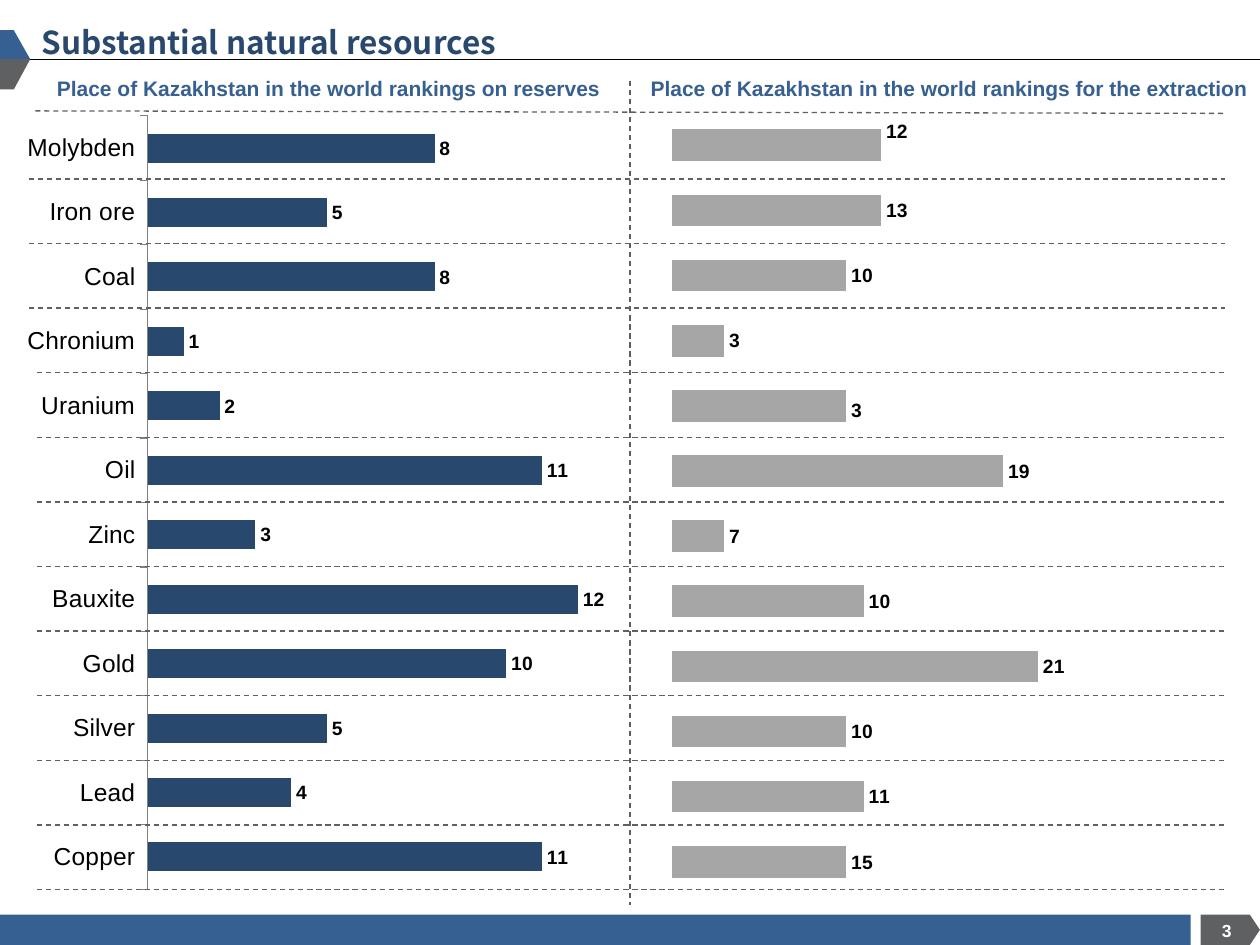
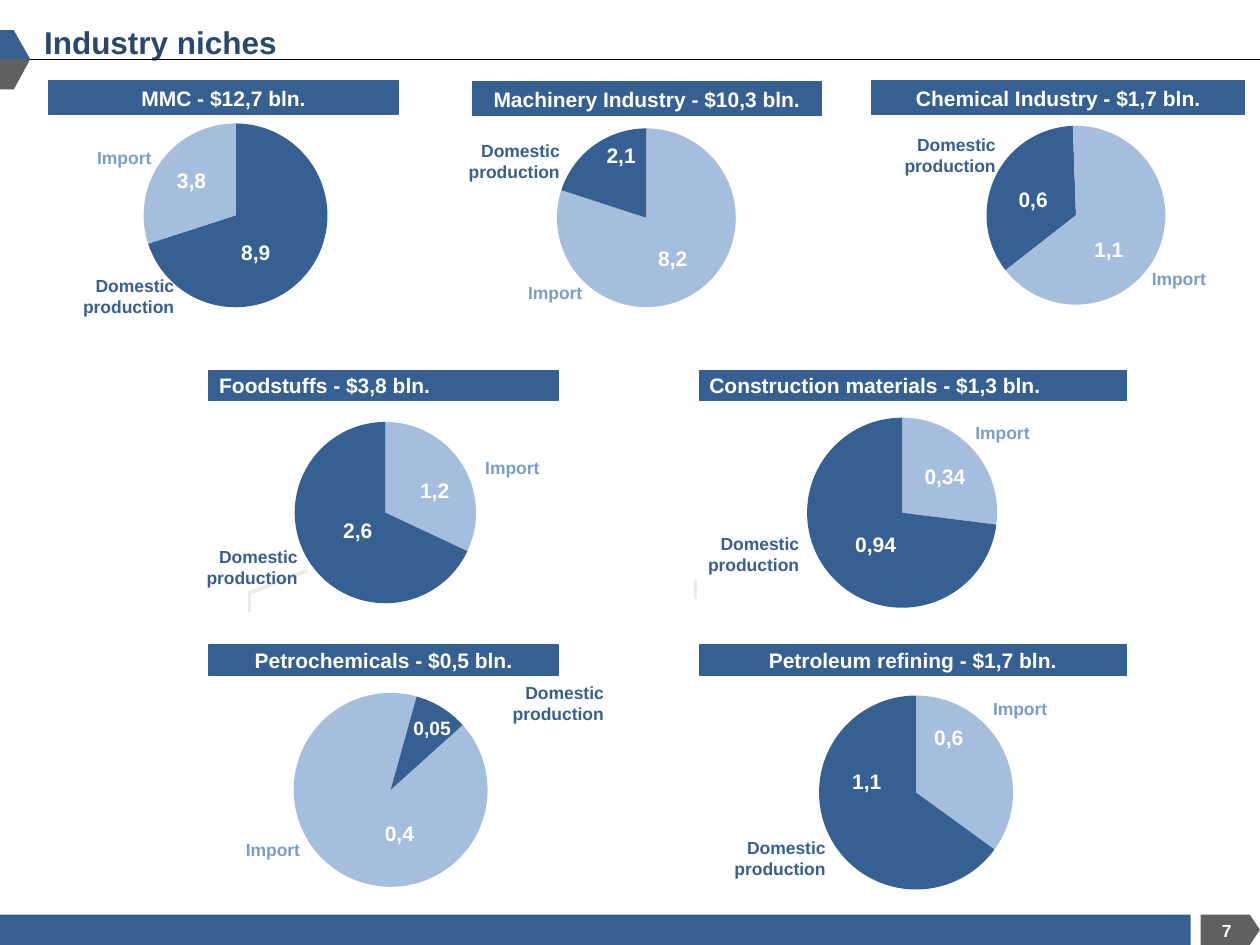
from lxml import etree
from pptx import Presentation
from pptx.chart.data import CategoryChartData
from pptx.dml.color import RGBColor
from pptx.enum.chart import XL_CHART_TYPE, XL_LABEL_POSITION, XL_TICK_LABEL_POSITION, XL_TICK_MARK
from pptx.enum.dml import MSO_LINE
from pptx.enum.shapes import MSO_CONNECTOR, MSO_SHAPE
from pptx.enum.text import MSO_ANCHOR, MSO_AUTO_SIZE, PP_ALIGN
from pptx.oxml.ns import qn
from pptx.util import Inches, Pt

BAR, PIE = XL_CHART_TYPE.BAR_CLUSTERED, XL_CHART_TYPE.PIE
OUTSIDE_END = XL_LABEL_POSITION.OUTSIDE_END
LOW, TICK_OUT, TICK_NONE = XL_TICK_LABEL_POSITION.LOW, XL_TICK_MARK.OUTSIDE, XL_TICK_MARK.NONE
DASH, STRAIGHT, RECTANGLE = MSO_LINE.DASH, MSO_CONNECTOR.STRAIGHT, MSO_SHAPE.RECTANGLE
TOP, MIDDLE = MSO_ANCHOR.TOP, MSO_ANCHOR.MIDDLE
LEFT, CENTER, RIGHT = PP_ALIGN.LEFT, PP_ALIGN.CENTER, PP_ALIGN.RIGHT

FONT = "Arial"
BLUE, NAVY, GRAY, WHITE, BLACK = "376092", "29486E", "5F6062", "FFFFFF", "000000"
PALE_BLUE, IMPORT_BLUE, BAR_GRAY, FAINT = "A5BEDD", "789ECC", "A6A6A6", "EBEBEB"


def paint(target, colour):
    """Colour a font, or give a fill a solid colour."""
    if hasattr(target, "solid"):
        target.solid()
        target.fore_color.rgb = RGBColor.from_string(colour)
    else:
        target.color.rgb = RGBColor.from_string(colour)


def write(box, text, size=12, colour=WHITE, font=FONT, align=CENTER, anchor=MIDDLE,
          wrap=True, margins=(0.1, 0.05), spacing=None):
    frame = box.text_frame
    frame.auto_size = MSO_AUTO_SIZE.NONE
    frame.word_wrap = wrap
    frame.vertical_anchor = anchor
    frame.margin_left = frame.margin_right = Inches(margins[0])
    frame.margin_top = frame.margin_bottom = Inches(margins[1])
    para = frame.paragraphs[0]
    para.alignment = align
    if spacing:
        para.line_spacing = spacing
    span = para.add_run()
    span.text = text
    span.font.name, span.font.size, span.font.bold = font, Pt(size), True
    paint(span.font, colour)


deck = Presentation()
deck.slide_width, deck.slide_height = Inches(10), Inches(7.5)

lines = []        # page, start and end, colour, width, dashed
plot_areas = []   # chart, plot rectangle as fractions of the chart

# Shared frame: bands, title, page number
flags = [
    (GRAY, [(9.92, 7.26), (9.53, 7.26), (9.53, 7.5), (9.92, 7.5), (10, 7.38)]),
    (BLUE, [(0.11, 0.24), (0, 0.24), (0, 0.47), (0.24, 0.47)]),
    (GRAY, [(0.24, 0.47), (0, 0.47), (0, 0.71), (0.11, 0.71)]),
]
pages = []
for title, number, title_at, title_font, spacing in [
    ("Substantial natural resources", "3", (0.23, 0.19, 4.75, 0.34), "Noto Sans CJK SC", 0.8),
    ("Industry niches", "7", (0.25, 0.13, 2.07, 0.4), FONT, None),
]:
    page = deck.slides.add_slide(deck.slide_layouts[5])
    pages.append(page)
    bands = [(page.shapes.add_shape(RECTANGLE, 0, Inches(7.26), Inches(9.45), Inches(0.24)), BLUE)]
    for colour, points in flags:
        corners = [(Inches(x), Inches(y)) for x, y in points]
        builder = page.shapes.build_freeform(*corners[0])
        builder.add_line_segments(corners[1:], close=True)
        bands.append((builder.convert_to_shape(), colour))
    for band, colour in bands:
        band.shadow.inherit = False
        paint(band.fill, colour)
        band.line.fill.background()
    lines.append((page, (0.24, 0.47, 10, 0.47), BLACK, 0.5, False))

    heading = page.shapes.title
    heading.left, heading.top, heading.width, heading.height = map(Inches, title_at)
    write(heading, title, size=18, colour=NAVY, font=title_font, align=LEFT, anchor=TOP,
          wrap=False, spacing=spacing)
    box = page.shapes.add_textbox(*map(Inches, (9.65, 7.3, 0.17, 0.17)))
    write(box, number, size=10, wrap=False, margins=(0, 0))

resources_page, niches_page = pages

# Resource rankings: two bar charts
resources = ["Copper", "Lead", "Silver", "Gold", "Bauxite", "Zinc", "Oil", "Uranium",
             "Chronium", "Coal", "Iron ore", "Molybden"]
places = [str(place) for place in range(1, 13)]
extraction_labels = [15, 11, 10, 21, 10, 7, 19, 3, 3, 10, 13, 12]
label_shifts = {7: 0.005, 11: -0.015}
for at, categories, values, colour, gap, top_value, plot_area in [
    ((0, 0.69, 5.31, 6.96), resources, [11, 4, 5, 10, 12, 3, 11, 2, 1, 8, 5, 8],
     NAVY, 122, 14, (0.221, 0.033, 0.75, 0.882)),
    ((5.16, 0.56, 5.39, 7.29), places, [10, 11, 10, 21, 11, 3, 19, 10, 3, 10, 12, 12],
     BAR_GRAY, 106, 25, (0.032, 0.046, 0.642, 0.851)),
]:
    data = CategoryChartData()
    data.categories = categories
    data.add_series("Series 1", values)
    chart = resources_page.shapes.add_chart(BAR, *map(Inches, at), data).chart
    plot_areas.append((chart, plot_area))
    chart.has_legend = chart.has_title = False
    chart.font.name, chart.font.size = FONT, Pt(14)
    paint(chart.font, BLACK)

    value_axis, category_axis = chart.value_axis, chart.category_axis
    value_axis.minimum_scale, value_axis.maximum_scale = 0, top_value
    value_axis.has_major_gridlines = value_axis.visible = False
    category_axis.visible = categories is resources
    category_axis.major_tick_mark, category_axis.minor_tick_mark = TICK_OUT, TICK_NONE
    category_axis.tick_label_position = LOW
    paint(category_axis.format.line.fill, "808080")
    category_axis.format.line.width = Pt(0.75)

    plot = chart.plots[0]
    plot.gap_width, plot.vary_by_categories = gap, False
    series = plot.series[0]
    paint(series.format.fill, colour)
    labels = series.data_labels
    labels.show_value, labels.position = True, OUTSIDE_END
    labels.font.size, labels.font.bold = Pt(11), True
    paint(labels.font, BLACK)

# Extraction places shown in place of the bar values
for index, place in enumerate(extraction_labels):
    label = series.points[index].data_label
    span = label.text_frame.paragraphs[0].add_run()
    span.text = str(place)
    span.font.name, span.font.size, span.font.bold = FONT, Pt(11), True
    paint(span.font, BLACK)
    label.position = OUTSIDE_END
for label in chart.element.iter(qn("c:dLbl")):
    index_element = label.find(qn("c:idx"))
    shift = label_shifts.get(int(index_element.get("val")))
    if shift:
        for old_layout in label.findall(qn("c:layout")):
            label.remove(old_layout)
        layout = etree.Element(qn("c:layout"))
        manual = etree.SubElement(layout, qn("c:manualLayout"))
        etree.SubElement(manual, qn("c:x")).set("val", "0")
        etree.SubElement(manual, qn("c:y")).set("val", str(shift))
        index_element.addnext(layout)

# Column headings and dashed row grid
for text, at in [
    ("Place of Kazakhstan in the world rankings on reserves", (0.21, 0.55, 4.8, 0.3)),
    ("Place of Kazakhstan in the world rankings for the extraction", (5.02, 0.55, 5.03, 0.3)),
]:
    write(resources_page.shapes.add_textbox(*map(Inches, at)), text, colour=BLUE, anchor=TOP)
grid = [(0.28, 0.88, 9.72, 0.9), (5, 0.64, 5, 7.18)]
for row in range(12):
    y = 1.42 + row * 5.64 / 11
    grid.append((0.23 if row < 3 else 0.29, y, 9.72, y))
lines += [(resources_page, ends, GRAY, 0.75, True) for ends in grid]

# Faint leader lines beside the middle pies
for ends in [(2.44, 4.53, 1.97, 4.71), (1.98, 4.86, 1.98, 4.71), (5.52, 4.75, 5.52, 4.6)]:
    lines.append((niches_page, ends, FAINT, 2.25, False))

# Draw all lines, below the pies and their labels
for page, ends, colour, width, dashed in lines:
    connector = page.shapes.add_connector(STRAIGHT, *map(Inches, ends))
    paint(connector.line.fill, colour)
    connector.line.width = Pt(width)
    if dashed:
        connector.line.dash_style = DASH
    etree.SubElement(connector.element.spPr, qn("a:effectLst"))

# Industry niches: pies. Circle is centre and diameter, names are right edge
# and middle, amounts are text, centre and size; import first, then domestic.
niches = [
    ("MMC - $12,7 bln.", (0.39, 0.64, 2.77, 0.27), CENTER,
     (0.9, 0.83, 1.95, 1.75), (1.87, 1.71, 1.46), 0, [(70, BLUE), (30, PALE_BLUE)],
     [(1.3, 1.25), (1.48, 2.35)], [("3,8", 1.52, 1.43, 12), ("8,9", 2.03, 2, 12)]),
    ("Machinery Industry - $10,3 bln.", (3.75, 0.65, 2.77, 0.27), CENTER,
     (4.25, 0.88, 1.76, 1.7), (5.13, 1.73, 1.42), 0, [(80, PALE_BLUE), (20, BLUE)],
     [(4.72, 2.32), (4.54, 1.28)], [("8,2", 5.34, 2.05, 12), ("2,1", 4.93, 1.23, 12)]),
    ("Chemical Industry - $1,7 bln.", (6.92, 0.64, 2.96, 0.27), CENTER,
     (7.56, 0.86, 1.97, 1.7), (8.54, 1.71, 1.42), 232, [(35, BLUE), (65, PALE_BLUE)],
     [(9.67, 2.21), (8, 1.23)], [("1,1", 8.8, 1.98, 12), ("0,6", 8.2, 1.58, 12)]),
    ("Foodstuffs - $3,8 bln.", (1.66, 2.94, 2.77, 0.24), LEFT,
     (2, 3.21, 2.12, 1.72), (3.06, 4.07, 1.44), 0, [(32, PALE_BLUE), (68, BLUE)],
     [(4.38, 3.71), (2.46, 4.5)], [("1,2", 3.45, 3.89, 12), ("2,6", 2.84, 4.21, 12)]),
    ("Construction materials - $1,3 bln.", (5.55, 2.94, 3.39, 0.24), LEFT,
     (6.09, 3.18, 2.14, 1.78), (7.16, 4.07, 1.51), 0, [(27, PALE_BLUE), (73, BLUE)],
     [(8.27, 3.43), (6.44, 4.4)], [("0,34", 7.5, 3.78, 12), ("0,94", 6.95, 4.32, 12)]),
    ("Petrochemicals - $0,5 bln.", (1.66, 5.12, 2.77, 0.24), CENTER,
     (1.93, 5.35, 2.33, 1.85), (3.1, 6.27, 1.54), 48, [(91, PALE_BLUE), (9, BLUE)],
     [(2.48, 6.74), (4.89, 5.58)], [("0,4", 3.17, 6.61, 12), ("0,05", 3.43, 5.78, 11)]),
    ("Petroleum refining - $1,7 bln.", (5.55, 5.12, 3.39, 0.24), CENTER,
     (6.11, 5.39, 2.31, 1.81), (7.27, 6.29, 1.54), 0, [(35, PALE_BLUE), (65, BLUE)],
     [(8.41, 5.62), (6.65, 6.81)], [("0,6", 7.53, 5.85, 12), ("1,1", 6.88, 6.2, 12)]),
]
name_styles = [("Import", IMPORT_BLUE, 0.87, 0.25), ("Domestic production", BLUE, 1.45, 0.42)]
for title, title_at, align, at, circle, start_angle, shares, name_spots, amounts in niches:
    data = CategoryChartData()
    data.categories = ["1", "2"]
    data.add_series("Series 1", [share for share, colour in shares])
    chart = niches_page.shapes.add_chart(PIE, *map(Inches, at), data).chart
    chart.has_legend = chart.has_title = False
    chart.font.name, chart.font.size = FONT, Pt(18)
    paint(chart.font, BLACK)
    left, top, width, height = at
    center_x, center_y, diameter = circle
    plot_areas.append((chart, ((center_x - diameter / 2 - left) / width,
                               (center_y - diameter / 2 - top) / height,
                               diameter / width, diameter / height)))
    for index, (share, colour) in enumerate(shares):
        slice_format = chart.plots[0].series[0].points[index].format
        paint(slice_format.fill, colour)
        slice_format.line.fill.background()
    pie = next(chart.element.iter(qn("c:pieChart")))
    for old_angle in pie.findall(qn("c:firstSliceAng")):
        pie.remove(old_angle)
    etree.SubElement(pie, qn("c:firstSliceAng")).set("val", str(start_angle))

    for (name, colour, width, height), (right, middle) in zip(name_styles, name_spots):
        spot = (right - width, middle - height / 2, width, height)
        box = niches_page.shapes.add_textbox(*map(Inches, spot))
        write(box, name, size=10, colour=colour, align=RIGHT)
    for amount, center_x, center_y, size in amounts:
        spot = (center_x - 0.37, center_y - 0.18, 0.74, 0.36)
        write(niches_page.shapes.add_textbox(*map(Inches, spot)), amount, size=size)

    header = niches_page.shapes.add_shape(RECTANGLE, *map(Inches, title_at))
    header.shadow.inherit = False
    paint(header.fill, BLUE)
    paint(header.line.fill, BLUE)
    header.line.width = Pt(0.75)
    write(header, title, align=align, margins=(0.08, 0.08))

# Fix the inner plot rectangle of every chart
for chart, rectangle in plot_areas:
    area = next(chart.element.iter(qn("c:plotArea")))
    for old_layout in area.findall(qn("c:layout")):
        area.remove(old_layout)
    layout = etree.Element(qn("c:layout"))
    area.insert(0, layout)
    manual = etree.SubElement(layout, qn("c:manualLayout"))
    settings = [("layoutTarget", "inner"), ("xMode", "edge"), ("yMode", "edge")]
    settings += [(key, f"{value:.3f}") for key, value in zip("xywh", rectangle)]
    for key, value in settings:
        etree.SubElement(manual, qn(f"c:{key}")).set("val", value)

deck.save("out.pptx")
